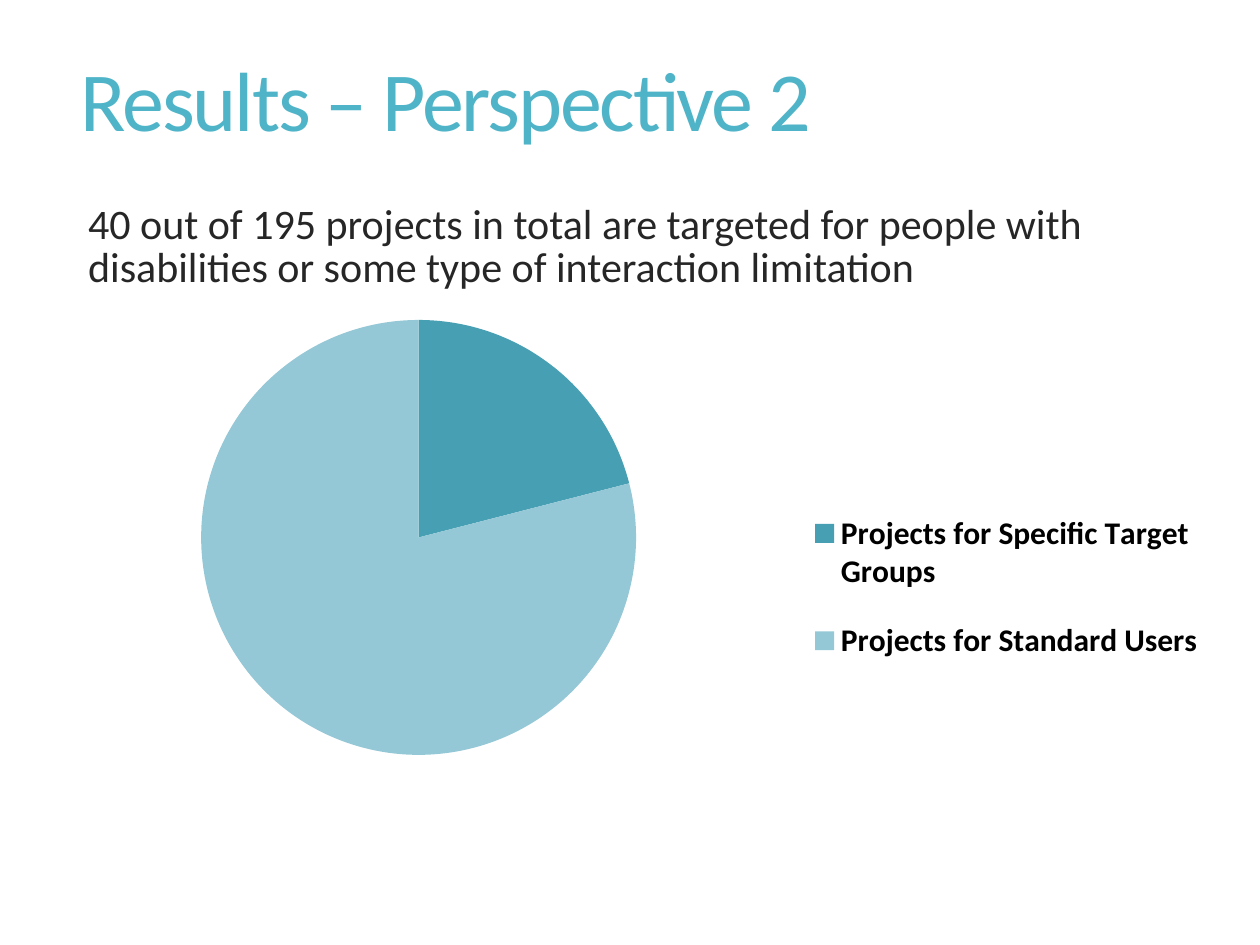
from dataclasses import dataclass

from lxml import etree
from pptx import Presentation
from pptx import util as u
from pptx.chart.data import CategoryChartData
from pptx.dml.color import RGBColor
from pptx.enum import chart as charts, text
from pptx.oxml.ns import qn


@dataclass(frozen=True)
class Theme:
    font: str = "Calibri"
    title_color: str = "50B4C8"
    body_color: str = "262626"
    legend_color: str = "000000"
    slice_colors: tuple = ("479FB3", "95C8D6")
    title_size: int = 48
    body_size: int = 24
    legend_size: int = 18


def style_font(font, name, size, color, bold=False):
    font.name = name
    font.size = u.Pt(size)
    font.bold = bold
    font.color.rgb = RGBColor.from_string(color)


def write_text(frame, content, *, font, size, color, line_spacing, tracking=0):
    paragraph = frame.paragraphs[0]
    paragraph.line_spacing = line_spacing
    run = paragraph.add_run()
    run.text = content
    style_font(run.font, font, size, color)
    if tracking:
        run.font._element.set("spc", str(round(tracking * 100)))


def place_manually(parent, index, inner=False, **fractions):
    for old_layout in parent.findall(qn("c:layout")):
        parent.remove(old_layout)
    layout = etree.Element(qn("c:layout"))
    manual = etree.SubElement(layout, qn("c:manualLayout"))
    settings = {"layoutTarget": "inner"} if inner else {}
    settings.update(xMode="edge", yMode="edge", **fractions)
    for name, value in settings.items():
        etree.SubElement(manual, qn(f"c:{name}")).set("val", str(value))
    parent.insert(index, layout)


class SlideBuilder:
    def __init__(self, slide, theme):
        self.slide = slide
        self.theme = theme

    def text_box(self, box, content, *, anchor, margin_left=0.1, margin_top=0.05, **style):
        shape = self.slide.shapes.add_textbox(*map(u.Inches, box))
        frame = shape.text_frame
        frame.word_wrap = True
        frame.vertical_anchor = anchor
        frame.margin_left = u.Inches(margin_left)
        frame.margin_top = u.Inches(margin_top)
        write_text(frame, content, font=self.theme.font, **style)

    def pie(self, box, series_name, shares):
        data = CategoryChartData()
        data.categories = list(shares)
        data.add_series(series_name, list(shares.values()))
        chart = self.slide.shapes.add_chart(
            charts.XL_CHART_TYPE.PIE, *map(u.Inches, box), data
        ).chart
        theme = self.theme
        style_font(chart.font, theme.font, theme.legend_size, theme.legend_color)
        chart.has_title = False
        plot = chart.plots[0]
        plot.vary_by_categories = True
        for index, color in enumerate(theme.slice_colors):
            fill = plot.series[0].points[index].format.fill
            fill.solid()
            fill.fore_color.rgb = RGBColor.from_string(color)
        chart.has_legend = True
        legend = chart.legend
        legend.position = charts.XL_LEGEND_POSITION.RIGHT
        legend.include_in_layout = False
        style_font(legend.font, theme.font, theme.legend_size, theme.legend_color, bold=True)
        plot_area = chart._chartSpace.find(".//" + qn("c:plotArea"))
        place_manually(plot_area, 0, inner=True, x=0.14, y=0.03, w=0.37, h=0.93)
        place_manually(legend._element, 1, x=0.65, y=0.38, w=0.35, h=0.44)


def main():
    presentation = Presentation()
    presentation.slide_width = u.Inches(10)
    presentation.slide_height = u.Inches(7.5)
    theme = Theme()
    slide = presentation.slides.add_slide(presentation.slide_layouts[6])
    builder = SlideBuilder(slide, theme)
    builder.text_box(
        (0.54, -0.08, 8.84, 1.81),
        "Results – Perspective 2",
        anchor=text.MSO_ANCHOR.MIDDLE,
        size=theme.title_size,
        color=theme.title_color,
        line_spacing=0.9,
        tracking=-1.2,
    )
    builder.text_box(
        (0.5, 1, 8.33, 5.83),
        "40 out of 195 projects in total are targeted for people with "
        "disabilities or some type of interaction limitation",
        anchor=text.MSO_ANCHOR.TOP,
        margin_left=0.2,
        margin_top=0.63,
        size=theme.body_size,
        color=theme.body_color,
        line_spacing=0.85,
    )
    builder.pie(
        (0.29, 2.41, 9.33, 3.75),
        "Series 1",
        {"Projects for Specific Target Groups": 21, "Projects for Standard Users": 79},
    )
    presentation.save("out.pptx")


if __name__ == "__main__":
    main()
